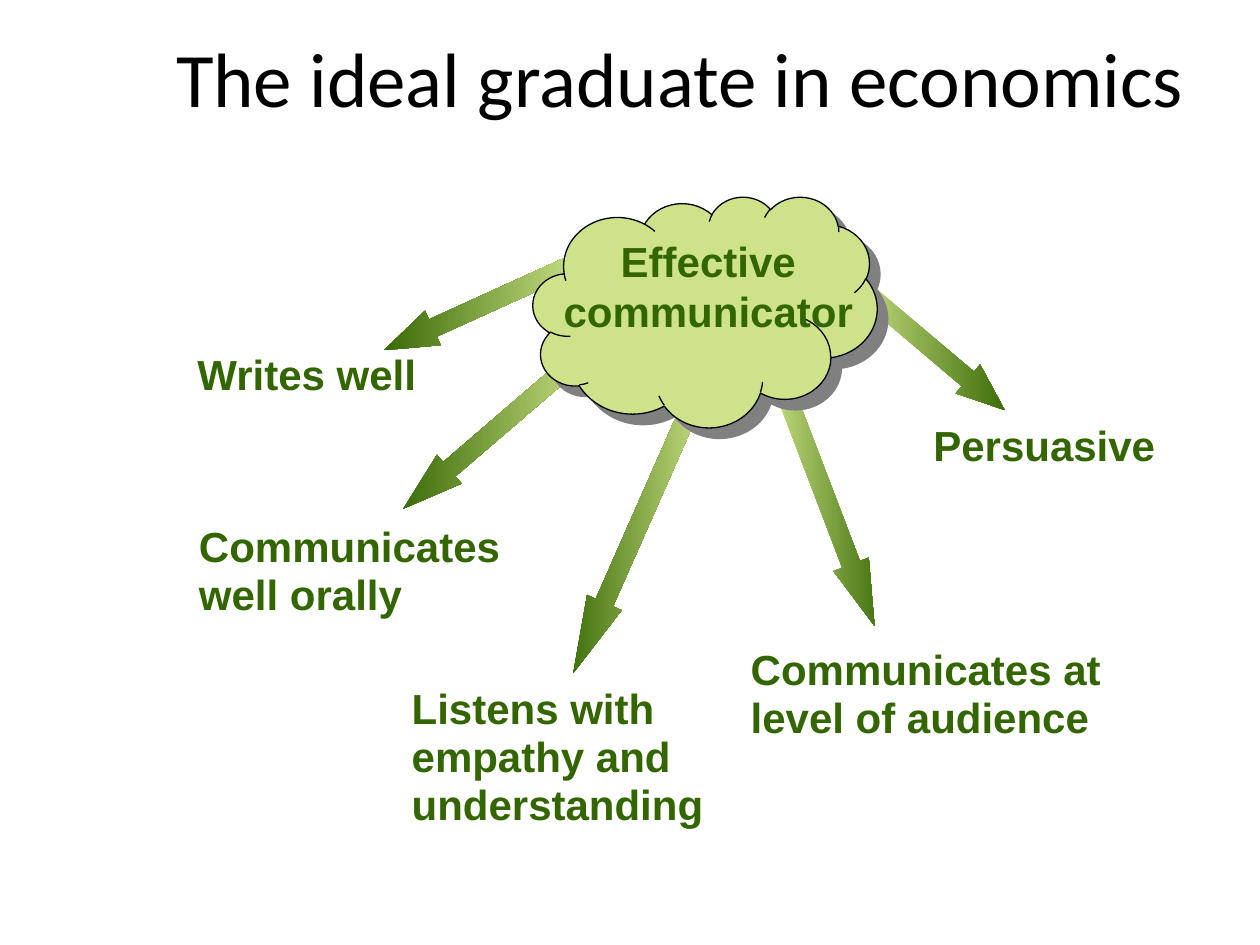
from dataclasses import dataclass

from lxml.etree import SubElement
from pptx import Presentation
from pptx.dml.color import RGBColor
from pptx.enum.shapes import MSO_SHAPE
from pptx.enum.text import MSO_ANCHOR, MSO_AUTO_SIZE, PP_ALIGN
from pptx.oxml.ns import qn
from pptx.util import Pt

COLORS = {
    "light": "CEE389",
    "dark": "336600",
    "black": "000000",
    "shadow": "808080",
}
ARROW_HEIGHT = 21.6


@dataclass
class Box:
    left: float
    top: float
    width: float
    height: float

    def lengths(self) -> tuple:
        return Pt(self.left), Pt(self.top), Pt(self.width), Pt(self.height)


@dataclass
class Skill:
    text: str
    label: Box
    arrow: Box
    rotation: float
    head: float  # arrowhead length relative to the arrow height


SKILLS = [
    Skill("Persuasive", Box(526.3, 238.3, 155.5, 34.6),
          Box(478.8, 188.6, 108, ARROW_HEIGHT), 40.2, 1.27),
    Skill("Communicates at level of audience", Box(421.9, 366.5, 252, 61.9),
          Box(399.6, 277.9, 147.6, ARROW_HEIGHT), 69.1, 1.74),
    Skill("Listens with empathy and understanding", Box(228.2, 388.8, 223.2, 89.3),
          Box(275.8, 294.5, 173.5, ARROW_HEIGHT), 113.8, 2.04),
    Skill("Communicates well orally", Box(106.6, 295.9, 205.2, 61.9),
          Box(213.8, 235.4, 136.8, ARROW_HEIGHT), 139.3, 1.61),
    Skill("Writes well", Box(105.8, 198, 146.9, 34.6),
          Box(213.8, 164.2, 121.7, ARROW_HEIGHT), 155.6, 1.43),
]


def color(name: str) -> RGBColor:
    return RGBColor.from_string(COLORS[name])


def add_text(shapes, text: str, place: Box, size: float = 24, font: str = "Arial",
             ink: str = "dark", bold: bool = True, align=PP_ALIGN.LEFT,
             spacing: float = 1.0):
    box = shapes.add_textbox(*place.lengths())
    frame = box.text_frame
    frame.word_wrap = True
    para = frame.paragraphs[0]
    para.text = text
    para.alignment = align
    para.line_spacing = spacing
    para.font.name = font
    para.font.size = Pt(size)
    para.font.bold = bold
    para.font.color.rgb = color(ink)
    return box


def add_arrow(shapes, skill: Skill) -> None:
    arrow = shapes.add_shape(MSO_SHAPE.RIGHT_ARROW, *skill.arrow.lengths())
    arrow.adjustments[0] = 0.5
    arrow.adjustments[1] = skill.head
    arrow.rotation = skill.rotation
    arrow.shadow.inherit = False
    arrow.line.fill.background()
    arrow.fill.gradient()
    arrow.fill.gradient_angle = 0
    # The gradient stays horizontal, so arrows pointing left start dark
    names = ("dark", "light") if skill.rotation > 90 else ("light", "dark")
    for stop, name in zip(arrow.fill.gradient_stops, names):
        stop.color.rgb = color(name)
    arrow._element.spPr.find(qn("a:gradFill")).set("rotWithShape", "0")


def add_skill(page, skill: Skill) -> None:
    group = page.shapes.add_group_shape()
    add_arrow(group.shapes, skill)
    label = add_text(group.shapes, skill.text, skill.label, spacing=0.95)
    label.text_frame.auto_size = MSO_AUTO_SIZE.SHAPE_TO_FIT_TEXT


def add_cloud(page, place: Box) -> None:
    cloud = page.shapes.add_shape(MSO_SHAPE.CLOUD, *place.lengths())
    cloud.fill.solid()
    cloud.fill.fore_color.rgb = color("light")
    cloud.line.color.rgb = color("black")
    cloud.line.width = Pt(0.75)
    # Hard drop shadow towards the lower right
    cloud.shadow.inherit = False
    effects = cloud._element.spPr.find(qn("a:effectLst"))
    shadow = SubElement(effects, qn("a:outerShdw"), dist=str(Pt(8.5)),
                        dir=str(45 * 60000), algn="ctr", rotWithShape="0")
    SubElement(shadow, qn("a:srgbClr"), val=COLORS["shadow"])


def main() -> None:
    deck = Presentation()
    deck.slide_width, deck.slide_height = Pt(720), Pt(540)
    page = deck.slides.add_slide(deck.slide_layouts[6])

    # Skills with their arrows, behind the cloud
    for skill in SKILLS:
        add_skill(page, skill)

    # Central cloud and its caption
    add_cloud(page, Box(304.6, 112.3, 196.6, 131.8))
    caption = add_text(page.shapes, "Effective communicator",
                       Box(308.2, 131, 193, 64.8), align=PP_ALIGN.CENTER)
    caption.text_frame.auto_size = MSO_AUTO_SIZE.SHAPE_TO_FIT_TEXT

    # Title
    title = add_text(page.shapes, "The ideal graduate in economics",
                     Box(87.8, 10.8, 601.9, 66.2), size=44, font="Calibri",
                     ink="black", bold=False, align=PP_ALIGN.CENTER)
    title.text_frame.vertical_anchor = MSO_ANCHOR.MIDDLE

    deck.save("out.pptx")


if __name__ == "__main__":
    main()
